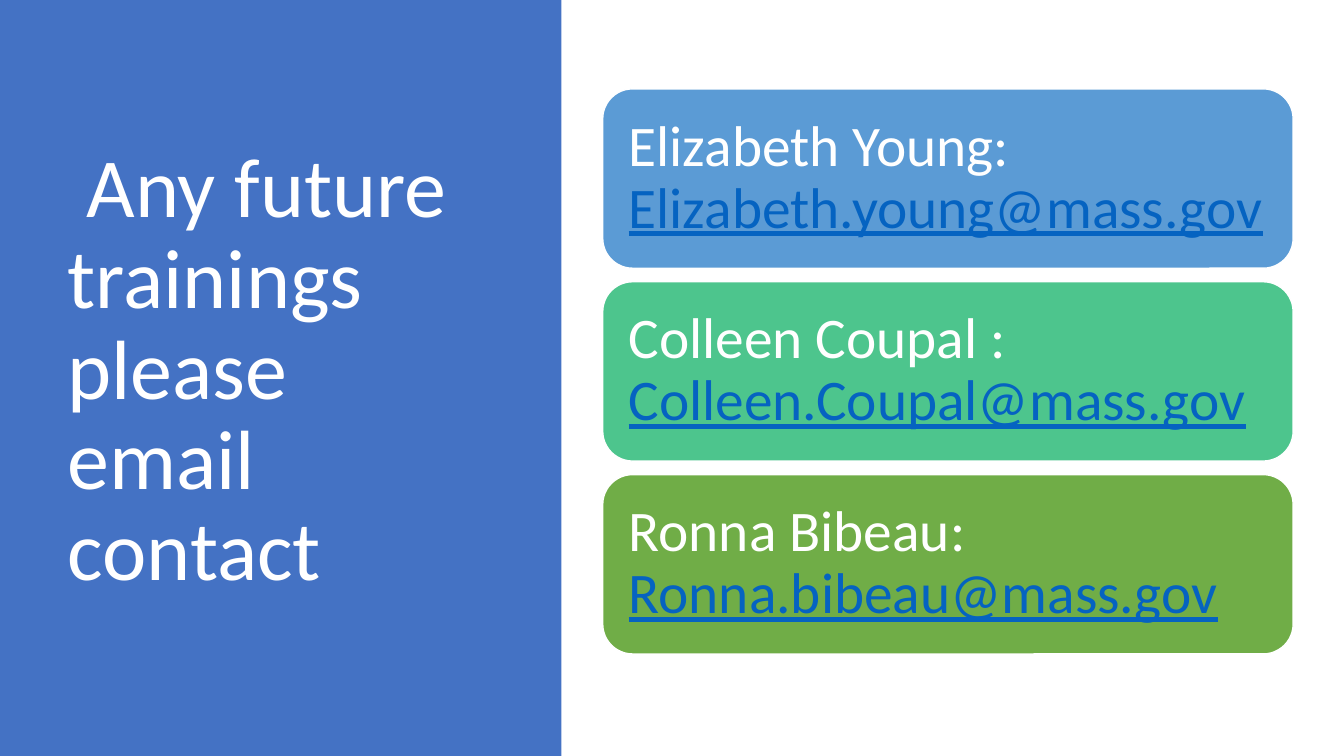
import pptx
import pptx.util
import pptx.dml.color
import pptx.enum.shapes
import pptx.enum.text
from pptx.util import Cm

COLORS = {
    "panel": "4472C4",
    "blue": "5B9BD5",
    "teal": "4DC58D",
    "green": "70AD47",
    "white": "FFFFFF",
    "email": "0563C1",
}
CONTACTS = [
    ("Elizabeth Young: ", "Elizabeth.young@mass.gov", "blue"),
    ("Colleen Coupal : ", "Colleen.Coupal@mass.gov", "teal"),
    ("Ronna Bibeau: ", "Ronna.bibeau@mass.gov", "green"),
]


def rgb(name):
    return pptx.dml.color.RGBColor.from_string(COLORS[name])


def add_text(p, text, size=41, color="white", font="Calibri", underline=False):
    r = p.add_run()
    r.text = text
    r.font.name = font
    r.font.size = pptx.util.Pt(size)
    r.font.color.rgb = rgb(color)
    r.font.underline = underline


class ContactSlide:
    """Holds the style and the current slide, and draws its elements."""

    line_spacing = 0.9
    card_inset = Cm(0.43)

    def __init__(self, prs):
        self.s = prs.slides.add_slide(prs.slide_layouts[5])

    def frame(self, sp):
        tf = sp.text_frame
        tf.word_wrap = True
        tf.auto_size = pptx.enum.text.MSO_AUTO_SIZE.NONE
        tf.vertical_anchor = pptx.enum.text.MSO_ANCHOR.MIDDLE
        p = tf.paragraphs[0]
        p.alignment = pptx.enum.text.PP_ALIGN.LEFT
        p.line_spacing = self.line_spacing
        return tf, p

    def box(self, kind, color, left, top, width, height):
        sp = self.s.shapes.add_shape(kind, left, top, width, height)
        sp.shadow.inherit = False
        sp.fill.solid()
        sp.fill.fore_color.rgb = rgb(color)
        sp.line.fill.background()
        return sp

    def panel(self, width, height):
        sp = self.box(pptx.enum.shapes.MSO_SHAPE.RECTANGLE, "panel", 0, 0, width, height)
        self.s.shapes._spTree.insert(2, sp._element)

    def title(self, text, left, top, width, height):
        sp = self.s.shapes.title
        sp.left, sp.top, sp.width, sp.height = left, top, width, height
        tf, p = self.frame(sp)
        add_text(p, text, size=60)

    def card(self, name, email, color, left, top, width, height):
        sp = self.box(pptx.enum.shapes.MSO_SHAPE.ROUNDED_RECTANGLE, color, left, top, width, height)
        sp.line.color.rgb = rgb("white")
        sp.line.width = pptx.util.Pt(1)
        tf, p = self.frame(sp)
        tf.margin_left = tf.margin_right = self.card_inset
        tf.margin_top = tf.margin_bottom = self.card_inset
        add_text(p, name)
        add_text(p, email, color="email", underline=True)


def main():
    prs = pptx.Presentation()
    prs.slide_width, prs.slide_height = Cm(33.87), Cm(19.05)
    slide = ContactSlide(prs)
    slide.panel(Cm(14.15), prs.slide_height)
    slide.title(" Any future trainings please email contact",
                Cm(1.45), Cm(1.73), Cm(10.57), Cm(15.29))
    for i, (name, email, color) in enumerate(CONTACTS):
        slide.card(name, email, color, Cm(15.19), Cm(2.24 + 4.86 * i), Cm(17.4), Cm(4.52))
    prs.save("out.pptx")


if __name__ == "__main__":
    main()
